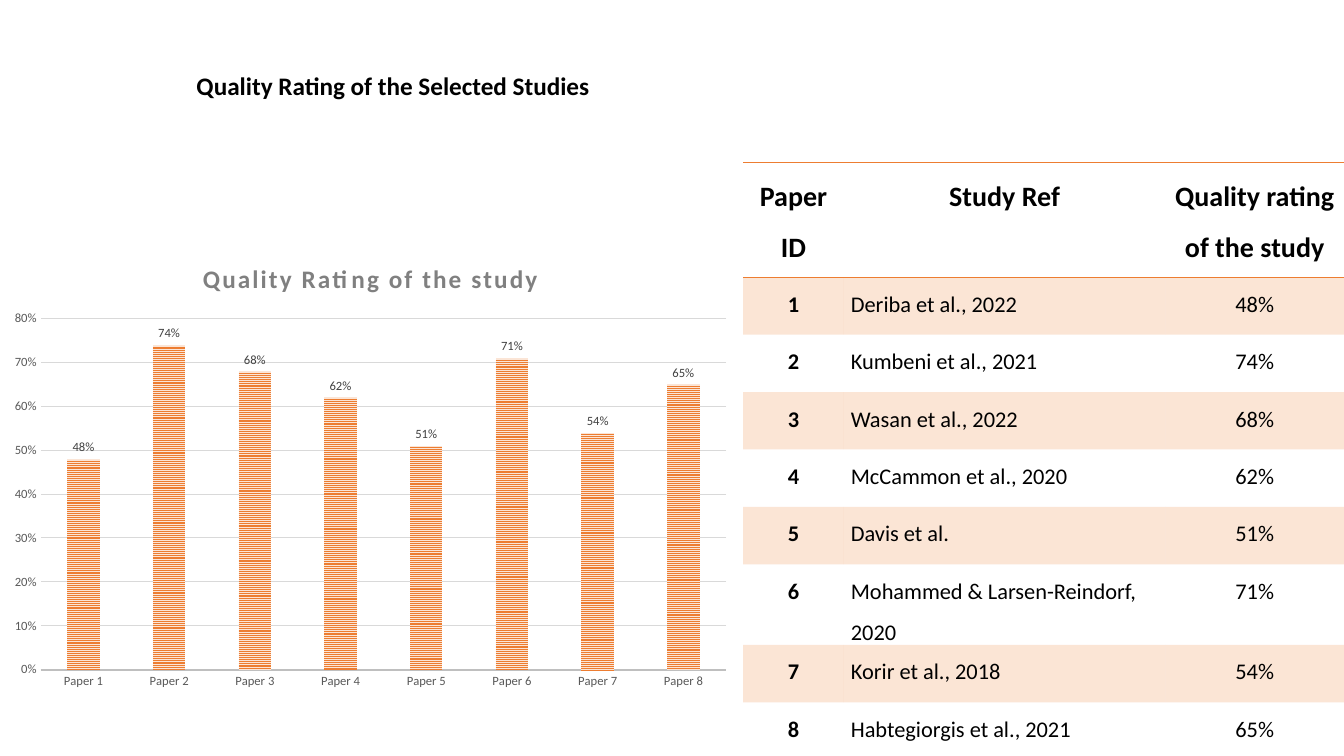
from dataclasses import dataclass
from lxml.etree import SubElement
from pptx import Presentation
from pptx.chart.data import CategoryChartData
from pptx.dml.color import RGBColor
from pptx.enum.chart import XL_CHART_TYPE, XL_LABEL_POSITION, XL_TICK_MARK
from pptx.enum.dml import MSO_PATTERN
from pptx.enum.text import MSO_AUTO_SIZE, PP_ALIGN
from pptx.oxml.ns import qn
from pptx.util import Emu, Inches, Pt

BARS = XL_CHART_TYPE.COLUMN_CLUSTERED
ABOVE = XL_LABEL_POSITION.OUTSIDE_END
NO_TICK = XL_TICK_MARK.NONE
STRIPES = MSO_PATTERN.NARROW_HORIZONTAL
GROW = MSO_AUTO_SIZE.SHAPE_TO_FIT_TEXT
LEFT, CENTER = PP_ALIGN.LEFT, PP_ALIGN.CENTER

FONT = "Calibri"
PLAIN = "{2D5ABB26-0587-4C30-8999-92F81FD0307C}"
RATING = "Quality Rating of the study"
WIDTH, HEIGHT = Inches(13.33), Inches(7.5)
COLORS = {
    "ink": "000000", "orange": "ED7D31", "peach": "FBE5D6", "title": "808080",
    "label": "404040", "tick": "595959", "axis": "BFBFBF", "grid": "D9D9D9",
}


@dataclass(frozen=True)
class Study:
    ref: str
    rate: int


@dataclass(frozen=True)
class Column:
    head: str
    share: float
    align: PP_ALIGN
    bold: bool


@dataclass(frozen=True)
class Box:
    left: float
    top: float
    width: float
    height: float

    def place(self) -> tuple[Emu, Emu, Emu, Emu]:
        return wide(self.left), high(self.top), wide(self.width), high(self.height)


STUDIES = [
    Study("Deriba et al., 2022", 48),
    Study("Kumbeni et al., 2021", 74),
    Study("Wasan et al., 2022", 68),
    Study("McCammon et al., 2020", 62),
    Study("Davis et al.", 51),
    Study("Mohammed & Larsen-Reindorf, 2020", 71),
    Study("Korir et al., 2018", 54),
    Study("Habtegiorgis et al., 2021", 65),
]
COLUMNS = [
    Column("Paper ID", 7.5, CENTER, True),
    Column("Study Ref", 23.93, LEFT, False),
    Column("Quality rating of the study", 13.28, CENTER, False),
]
HEAD_ROW, BODY_ROW, TALL_ROW = 15.2, 7.6, 9.07
TITLE_BOX = Box(13.88, 8.67, 30.98, 5.33)
TABLE_BOX = Box(55.29, 21.47, 44.71, 79.07)
CHART_BOX = Box(0, 32, 55.14, 60.27)


def wide(share: float) -> Emu:
    return Emu(round(WIDTH * share / 100))


def high(share: float) -> Emu:
    return Emu(round(HEIGHT * share / 100))


def paint(name: str) -> RGBColor:
    return RGBColor.from_string(COLORS[name])


def style(font, size: float, color: str, bold: bool = False) -> None:
    font.name, font.size, font.bold = FONT, Pt(size), bold
    font.color.rgb = paint(color)


def add_run(para, text: str, size: float, color: str = "ink", bold: bool = False):
    run = para.add_run()
    run.text = text
    style(run.font, size, color, bold)
    return run


def add_title(slide) -> None:
    box = slide.shapes.add_textbox(*TITLE_BOX.place())
    box.text_frame.word_wrap = False
    box.text_frame.auto_size = GROW
    add_run(box.text_frame.paragraphs[0], "Quality Rating of the Selected Studies", 18, bold=True)


def add_edge(cell, side: str) -> None:
    line = SubElement(cell._tc.get_or_add_tcPr(), qn(f"a:{side}"), w=str(Pt(1)))
    fill = SubElement(line, qn("a:solidFill"))
    SubElement(fill, qn("a:srgbClr"), val=COLORS["orange"])


def tint(cell) -> None:
    cell.fill.solid()
    cell.fill.fore_color.rgb = paint("orange")
    color = cell._tc.tcPr.find(qn("a:solidFill")).find(qn("a:srgbClr"))
    SubElement(color, qn("a:alpha"), val="20000")


def fill_cell(cell, text: str, size: float, align: PP_ALIGN, bold: bool,
              edges: tuple[str, ...], band: bool) -> None:
    cell.margin_left = cell.margin_right = Inches(0.07)
    cell.margin_top = cell.margin_bottom = 0
    para = cell.text_frame.paragraphs[0]
    para.alignment, para.line_spacing = align, 1.5
    add_run(para, text, size, bold=bold)
    for side in edges:
        add_edge(cell, side)
    if band:
        tint(cell)
    else:
        cell.fill.background()


def add_table(slide) -> None:
    last = len(STUDIES)
    table = slide.shapes.add_table(last + 1, len(COLUMNS), *TABLE_BOX.place()).table
    table.first_row = table.horz_banding = False
    table._tbl.tblPr.find(qn("a:tableStyleId")).text = PLAIN
    table.rows[0].height = high(HEAD_ROW)
    for col, spec_col in enumerate(COLUMNS):
        table.columns[col].width = wide(spec_col.share)
        fill_cell(table.cell(0, col), spec_col.head, 20, CENTER, True, ("lnT", "lnB"), False)
    for row, study in enumerate(STUDIES, 1):
        table.rows[row].height = high(TALL_ROW if len(study.ref) > 30 else BODY_ROW)
        edges = ("lnB",) if row == last else ()
        texts = (str(row), study.ref, f"{study.rate}%")
        for col, (kind, text) in enumerate(zip(COLUMNS, texts)):
            fill_cell(table.cell(row, col), text, 16, kind.align, kind.bold, edges, row % 2 == 1)


def set_axis(axis) -> None:
    axis.major_tick_mark = axis.minor_tick_mark = NO_TICK
    style(axis.tick_labels.font, 9, "tick")


def add_chart(slide) -> None:
    data = CategoryChartData(number_format="0%")
    data.categories = [f"Paper {num}" for num in range(1, len(STUDIES) + 1)]
    data.add_series(RATING, [study.rate / 100 for study in STUDIES])
    chart = slide.shapes.add_chart(BARS, *CHART_BOX.place(), data).chart
    style(chart.font, 10, "ink")
    chart.has_legend = False

    chart.has_title = True
    chart.chart_title.include_in_layout = False
    run = add_run(chart.chart_title.text_frame.paragraphs[0], RATING, 18, "title", True)
    run.font._element.set("spc", "150")

    base, scale = chart.category_axis, chart.value_axis
    set_axis(base)
    set_axis(scale)
    base.format.line.color.rgb = paint("axis")
    base.format.line.width = Pt(1.5)
    scale.format.line.fill.background()
    scale.minimum_scale, scale.maximum_scale, scale.major_unit = 0, 0.8, 0.1
    scale.tick_labels.number_format = "0%"
    scale.tick_labels.number_format_is_linked = False
    scale.major_gridlines.format.line.color.rgb = paint("grid")
    scale.major_gridlines.format.line.width = Pt(0.75)

    plot = chart.plots[0]
    plot.gap_width, plot.overlap, plot.vary_by_categories = 164, -22, False
    series = plot.series[0]
    series.invert_if_negative = False
    fill = series.format.fill
    fill.patterned()
    fill.pattern = STRIPES
    fill.fore_color.rgb, fill.back_color.rgb = paint("orange"), paint("peach")
    labels = series.data_labels
    labels.show_value, labels.position = True, ABOVE
    labels.number_format, labels.number_format_is_linked = "0%", False
    style(labels.font, 9, "label")


def main() -> None:
    deck = Presentation()
    deck.slide_width, deck.slide_height = WIDTH, HEIGHT
    slide = deck.slides.add_slide(deck.slide_layouts[6])
    add_title(slide)
    add_table(slide)
    add_chart(slide)
    deck.save("out.pptx")


if __name__ == "__main__":
    main()
